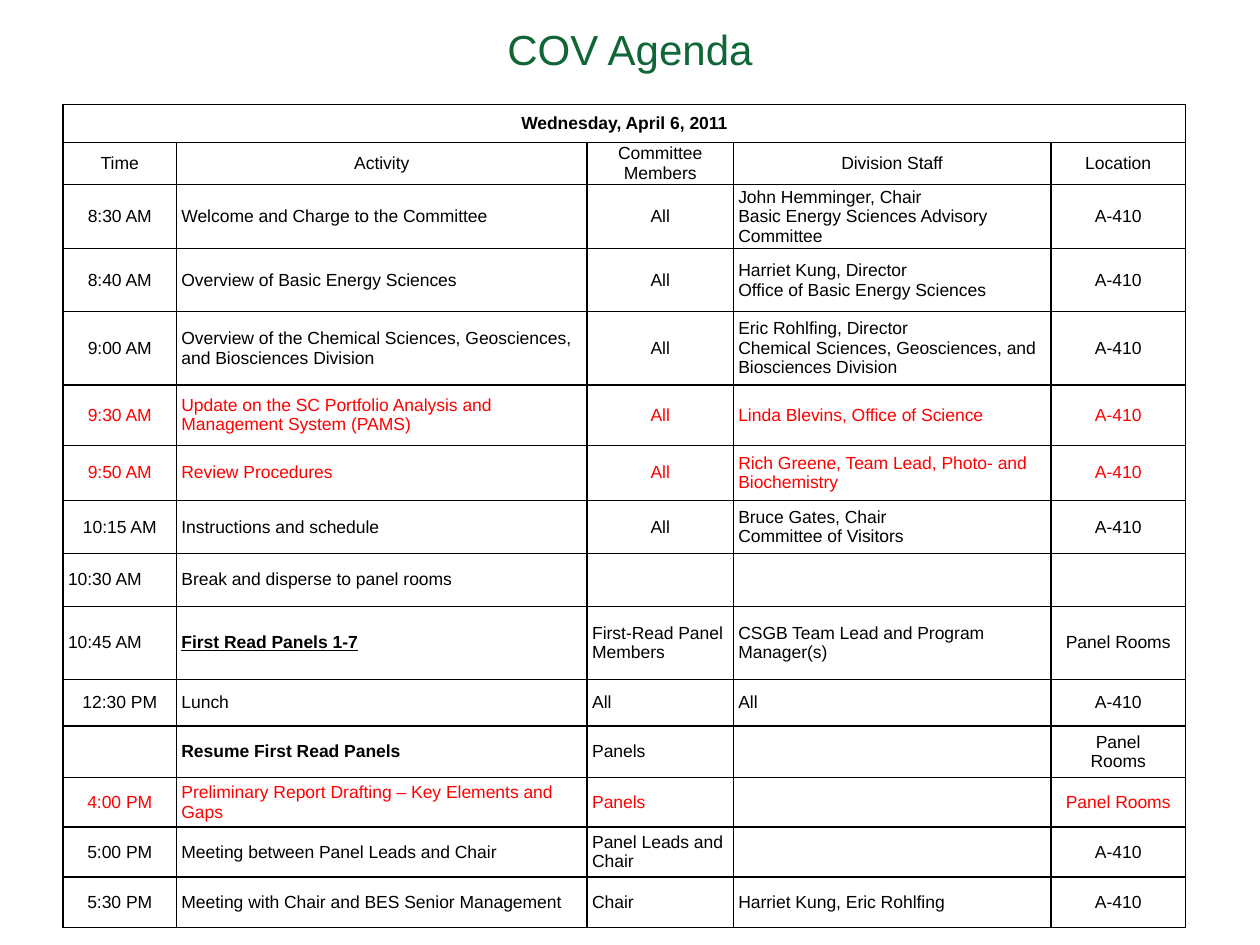
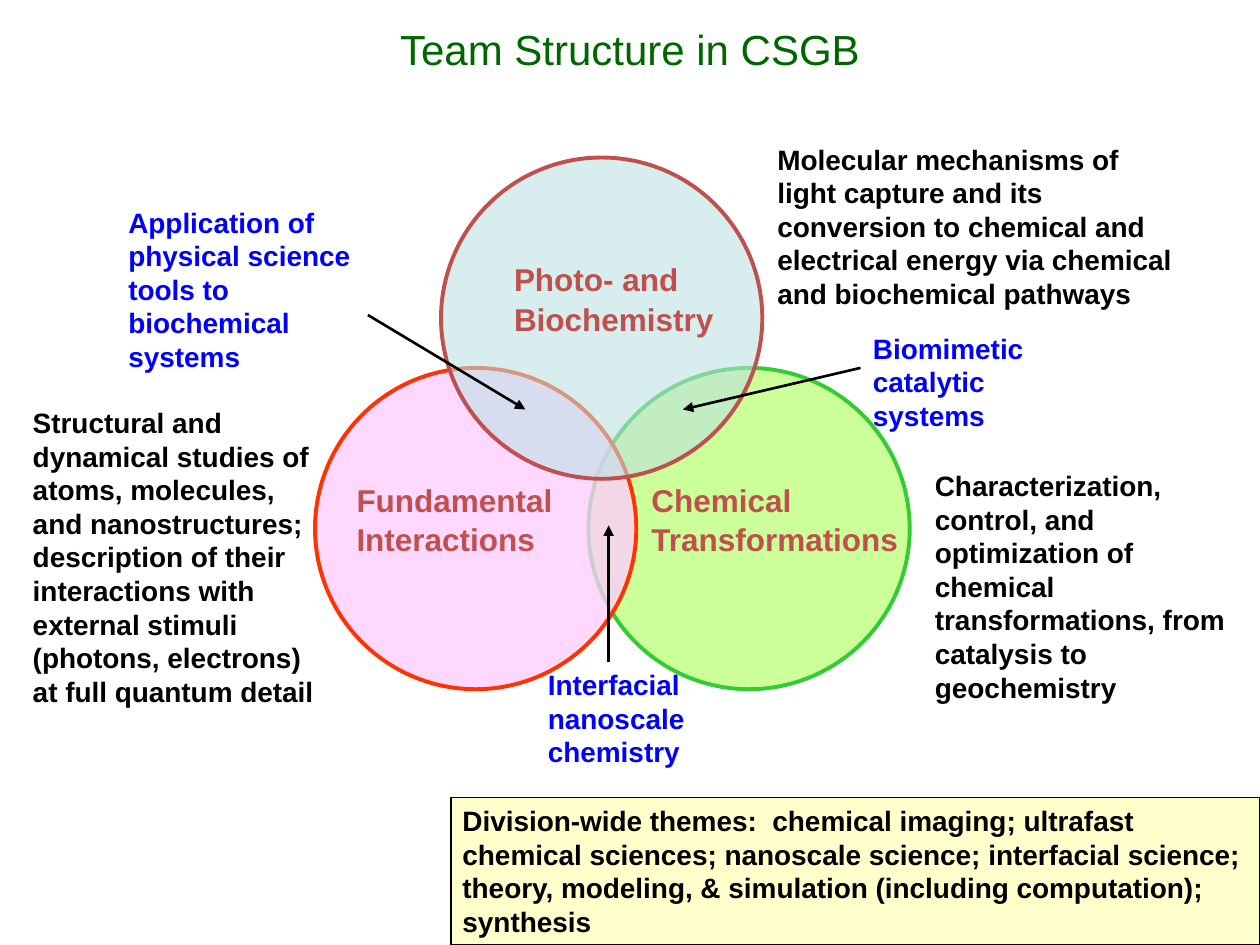
from lxml.etree import SubElement
from pptx import Presentation
from pptx.dml.color import RGBColor
from pptx.enum.shapes import MSO_CONNECTOR, MSO_SHAPE
from pptx.enum.text import MSO_ANCHOR, PP_ALIGN
from pptx.oxml import parse_xml
from pptx.oxml.ns import nsdecls, qn
from pptx.util import Inches, Pt

BLACK, WHITE, RED, BLUE, BRICK = "000000", "FFFFFF", "FF0000", "0000FF", "C0504D"
CENTER, LEFT = PP_ALIGN.CENTER, PP_ALIGN.LEFT

COLUMNS = [0.9, 3.26, 1.16, 2.52, 1.07]
HEADINGS = ["Time", "Activity", "Committee Members", "Division Staff", "Location"]
AGENDA = [
    (0.51, "8:30 AM", "Welcome and Charge to the Committee", "All",
     "John Hemminger, Chair\nBasic Energy Sciences Advisory Committee", "A-410"),
    (0.5, "8:40 AM", "Overview of Basic Energy Sciences", "All",
     "Harriet Kung, Director\nOffice of Basic Energy Sciences", "A-410"),
    (0.58, "9:00 AM", "Overview of the Chemical Sciences, Geosciences, and Biosciences Division", "All",
     "Eric Rohlfing, Director\nChemical Sciences, Geosciences, and Biosciences Division", "A-410"),
    (0.48, "9:30 AM", "Update on the SC Portfolio Analysis and Management System (PAMS)", "All",
     "Linda Blevins, Office of Science", "A-410"),
    (0.44, "9:50 AM", "Review Procedures", "All",
     "Rich Greene, Team Lead, Photo- and Biochemistry", "A-410"),
    (0.42, "10:15 AM", "Instructions and schedule", "All",
     "Bruce Gates, Chair\nCommittee of Visitors", "A-410"),
    (0.42, "10:30 AM", "Break and disperse to panel rooms", "", "", ""),
    (0.58, "10:45 AM", "First Read Panels 1-7", "First-Read Panel Members",
     "CSGB Team Lead and Program Manager(s)", "Panel Rooms"),
    (0.37, "12:30 PM", "Lunch", "All", "All", "A-410"),
    (0.41, "", "Resume First Read Panels", "Panels", "", "Panel\nRooms"),
    (0.39, "4:00 PM", "Preliminary Report Drafting – Key Elements and Gaps", "Panels", "", "Panel Rooms"),
    (0.4, "5:00 PM", "Meeting between Panel Leads and Chair", "Panel Leads and Chair", "", "A-410"),
    (0.4, "5:30 PM", "Meeting with Chair and BES Senior Management", "Chair",
     "Harriet Kung, Eric Rohlfing", "A-410"),
]
RED_TIMES = {"9:30 AM", "9:50 AM", "4:00 PM"}
LEFT_TIMES = {"10:30 AM", "10:45 AM"}
PANEL_SESSIONS = {"First Read Panels 1-7", "Resume First Read Panels"}


def rgb(value):
    return RGBColor.from_string(value)


class Deck:
    font = "Arial"

    def __init__(self):
        self.prs = Presentation()
        self.prs.slide_width, self.prs.slide_height = Inches(10), Inches(7.5)

    def slide(self, title, color):
        self.s = self.prs.slides.add_slide(self.prs.slide_layouts[6])
        self.text(title, 0, -0.24, 10, 1.25, 24, color, bold=False,
                  align=CENTER, anchor=MSO_ANCHOR.MIDDLE)

    def style(self, tf, text, size, color, bold=False, align=LEFT, spacing=None):
        tf.text = text
        for p in tf.paragraphs:
            p.alignment = align
            if spacing:
                p.line_spacing = spacing
            p.font.name, p.font.size = self.font, Pt(size)
            p.font.bold, p.font.color.rgb = bold, rgb(color)

    def fit(self, tf, inset, anchor=MSO_ANCHOR.TOP):
        tf.word_wrap = True
        tf.vertical_anchor = anchor
        tf.margin_left = tf.margin_right = Inches(inset)
        tf.margin_top = tf.margin_bottom = Inches(0.05)

    def text(self, text, x, y, w, h, size=16, color=BLACK, bold=True, inset=0.1,
             align=LEFT, anchor=MSO_ANCHOR.TOP, spacing=None):
        tf = self.s.shapes.add_textbox(Inches(x), Inches(y), Inches(w), Inches(h)).text_frame
        self.fit(tf, inset, anchor)
        self.style(tf, text, size, color, bold, align, spacing)

    def shape(self, kind, x, y, w, h, fill, line, width, alpha=None):
        sp = self.s.shapes.add_shape(kind, Inches(x), Inches(y), Inches(w), Inches(h))
        sp.shadow.inherit = False
        sp.fill.solid()
        sp.fill.fore_color.rgb = rgb(fill)
        sp.line.color.rgb, sp.line.width = rgb(line), Pt(width)
        if alpha:
            clr = sp.fill._xPr.find(qn("a:solidFill"))[0]
            SubElement(clr, qn("a:alpha"), val=str(alpha * 1000))
        return sp

    def circle(self, x, y, fill, line, alpha=None):
        self.shape(MSO_SHAPE.OVAL, x, y, 2.55, 2.55, fill, line, 2.25, alpha)

    def team(self, name, x, y, w):
        self.text(name, x, y, w, 0.75, 18, BRICK, inset=0, spacing=1.05)

    def banner(self, text, x, y, w, h, fill):
        tf = self.shape(MSO_SHAPE.RECTANGLE, x, y, w, h, fill, BLACK, 0.75).text_frame
        self.fit(tf, 0.09)
        self.style(tf, text, 16, BLACK, True)

    def arrow(self, x1, y1, x2, y2):
        c = self.s.shapes.add_connector(MSO_CONNECTOR.STRAIGHT, Inches(x1), Inches(y1),
                                        Inches(x2), Inches(y2))
        c.line.color.rgb, c.line.width = rgb(BLACK), Pt(1.5)
        SubElement(c.line._get_or_add_ln(), qn("a:tailEnd"), type="triangle")
        SubElement(c._element.spPr, qn("a:effectLst"))

    def table(self, x, y, widths, heights):
        table = self.s.shapes.add_table(len(heights), len(widths), Inches(x), Inches(y),
                                        Inches(sum(widths)), Inches(sum(heights))).table
        for column, width in zip(table.columns, widths):
            column.width = Inches(width)
        for row, height in zip(table.rows, heights):
            row.height = Inches(height)
        return table

    def cell(self, cell, text, align=LEFT, color=BLACK, bold=False):
        cell.fill.solid()
        cell.fill.fore_color.rgb = rgb(WHITE)
        cell.vertical_anchor = MSO_ANCHOR.MIDDLE
        cell.margin_left = cell.margin_right = Inches(0.04)
        cell.margin_top = cell.margin_bottom = 0
        tcPr = cell._tc.get_or_add_tcPr()
        for i, side in enumerate("LRTB"):
            tcPr.insert(i, parse_xml(
                f'<a:ln{side} {nsdecls("a")} w="12700"><a:solidFill>'
                f'<a:srgbClr val="{BLACK}"/></a:solidFill></a:ln{side}>'))
        self.style(cell.text_frame, text, 10, color, bold, align)


def agenda_slide(deck):
    deck.slide("COV Agenda", "106636")
    table = deck.table(0.5, 0.83, COLUMNS, [0.3, 0.31] + [row[0] for row in AGENDA])
    table.cell(0, 0).merge(table.cell(0, len(COLUMNS) - 1))
    for c, heading in enumerate(HEADINGS):
        deck.cell(table.cell(0, c), "" if c else "Wednesday, April 6, 2011", CENTER, bold=True)
        deck.cell(table.cell(1, c), heading, CENTER)
    for r, (_, *texts) in enumerate(AGENDA, 2):
        time, activity = texts[:2]
        color = RED if time in RED_TIMES else BLACK
        time_align = LEFT if time in LEFT_TIMES else CENTER
        member_align = CENTER if r < 8 else LEFT
        aligns = [time_align, LEFT, member_align, LEFT, CENTER]
        for c, (text, align) in enumerate(zip(texts, aligns)):
            deck.cell(table.cell(r, c), text, align, color, c == 1 and activity in PANEL_SESSIONS)
        if activity == "First Read Panels 1-7":
            table.cell(r, 1).text_frame.paragraphs[0].font.underline = True


def team_slide(deck):
    deck.slide("Team Structure in CSGB", "006600")
    deck.banner("Division-wide themes:  chemical imaging; ultrafast chemical sciences; nanoscale "
                "science; interfacial science; theory, modeling, & simulation (including "
                "computation); synthesis", 3.58, 6.33, 6.42, 1.17, "FFFFCC")

    deck.circle(4.67, 2.92, "CCFF99", "33CC33")
    deck.circle(2.5, 2.92, "FFCCFF", "FF3300", 76)
    deck.team("Chemical\nTransformations", 5.17, 3.75, 2)
    deck.team("Fundamental\nInteractions", 2.83, 3.75, 1.7)
    deck.circle(3.5, 1.25, "BBE0E3", BRICK, 58)
    deck.team("Photo- and Biochemistry", 4.08, 2, 1.83)

    for text, x, y, w, h in [
        ("Molecular mechanisms of light capture and its conversion to chemical and electrical "
         "energy via chemical and biochemical pathways", 6.08, 1.08, 3.33, 1.44),
        ("Characterization, control, and optimization of chemical transformations, from "
         "catalysis to geochemistry", 7.33, 3.67, 2.5, 1.98),
        ("Structural and dynamical studies of atoms, molecules, and nanostructures; description "
         "of their interactions with external stimuli (photons, electrons) at full quantum "
         "detail", 0.17, 3.17, 2.5, 2.5),
    ]:
        deck.text(text, x, y, w, h, inset=0.09)

    for text, x, y, w, h, arrow in [
        ("Application of physical science tools to biochemical systems",
         0.92, 1.58, 2.25, 1.45, (2.92, 2.5, 4.17, 3.25)),
        ("Biomimetic catalytic systems", 6.83, 2.58, 1.83, 0.91, (6.83, 2.92, 5.42, 3.25)),
        ("Interfacial nanoscale chemistry", 4.25, 5.25, 1.83, 0.9, (4.83, 5.25, 4.83, 4.17)),
    ]:
        deck.text(text, x, y, w, h, color=BLUE)
        deck.arrow(*arrow)


def main():
    deck = Deck()
    agenda_slide(deck)
    team_slide(deck)
    deck.prs.save("out.pptx")


if __name__ == "__main__":
    main()
